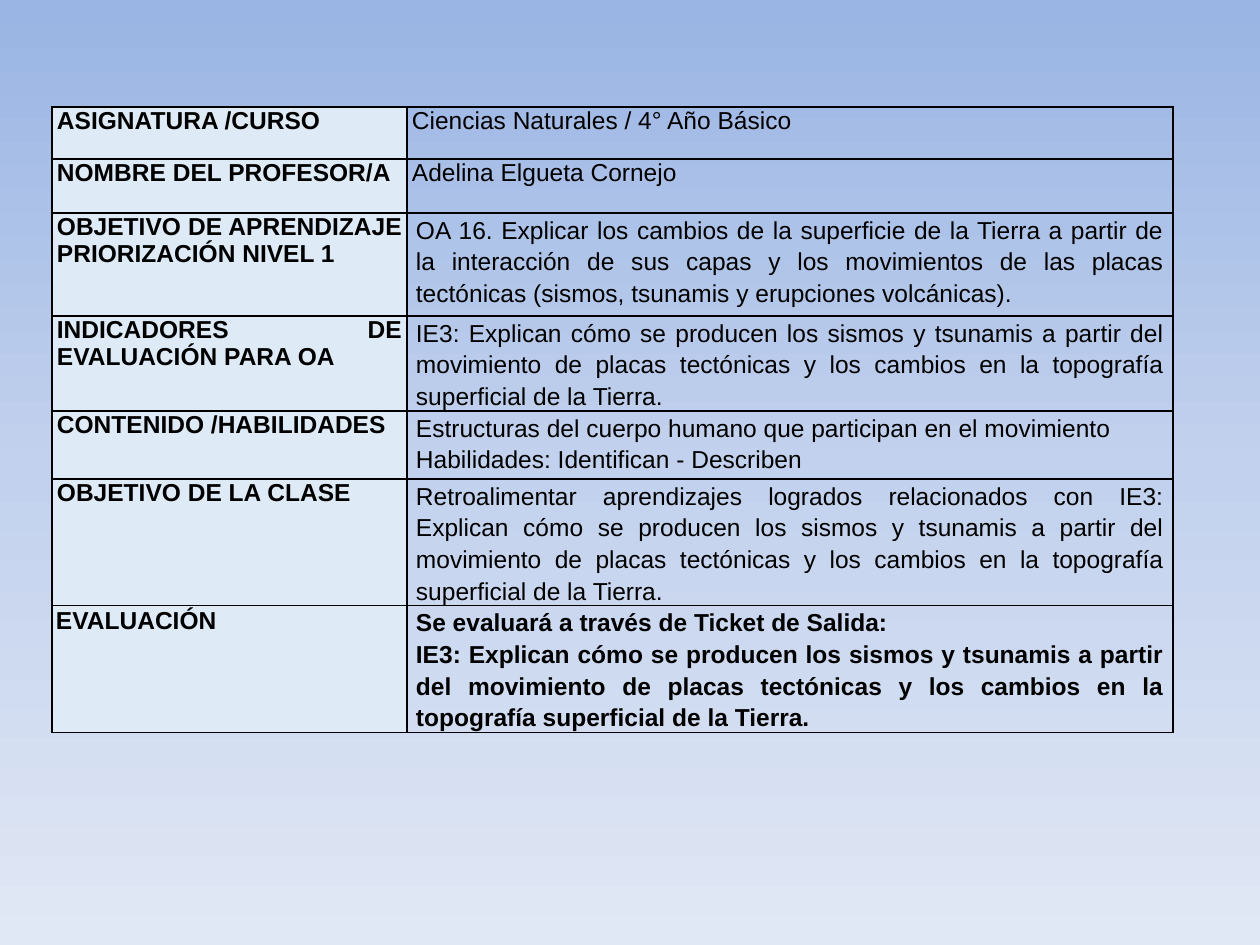
import copy
from dataclasses import dataclass

import lxml.etree
import pptx
import pptx.dml.color
import pptx.enum.text
import pptx.oxml.ns
import pptx.util

EMU_PER_PX = 914400 / 126


@dataclass(frozen=True)
class Theme:
    font: str = "Arial"
    size: int = 14
    text: str = "000000"
    border: str = "000000"
    border_width: int = 1
    label_fill: str = "DEEAF6"
    background: tuple = ((0, "9AB5E4"), (0.5, "C2D1ED"), (1, "E1E8F5"))


THEME = Theme()
TABLE_BOX = (52, 107, 1121, 625)
COLUMN_WIDTHS = (355, 766)
# Cell margins: left and right, top and bottom
TIGHT, WIDE, FRAMED = (5, 0), (9, 0), (4, 2)

# Height, label, paragraphs, label margins, content margins, spacing, bold
ROWS = [
    (52, "ASIGNATURA /CURSO", ["Ciencias Naturales / 4° Año Básico"],
     TIGHT, TIGHT, 1, False),
    (54, "NOMBRE DEL PROFESOR/A", ["Adelina Elgueta Cornejo"],
     TIGHT, TIGHT, 1, False),
    (103, "OBJETIVO DE APRENDIZAJE PRIORIZACIÓN NIVEL 1",
     ["OA 16. Explicar los cambios de la superficie de la Tierra a partir de "
      "la interacción de sus capas y los movimientos de las placas tectónicas "
      "(sismos, tsunamis y erupciones volcánicas)."],
     TIGHT, WIDE, 1.15, False),
    (95, "INDICADORES DE EVALUACIÓN PARA OA",
     ["IE3: Explican cómo se producen los sismos y tsunamis a partir del "
      "movimiento de placas tectónicas y los cambios en la topografía "
      "superficial de la Tierra."],
     TIGHT, WIDE, 1.15, False),
    (68, "CONTENIDO /HABILIDADES",
     ["Estructuras del cuerpo humano que participan en el movimiento",
      "Habilidades: Identifican - Describen"],
     TIGHT, WIDE, 1.15, False),
    (126, "OBJETIVO DE LA CLASE",
     ["Retroalimentar aprendizajes logrados relacionados con IE3: Explican "
      "cómo se producen los sismos y tsunamis a partir del movimiento de "
      "placas tectónicas y los cambios en la topografía superficial de la "
      "Tierra."],
     TIGHT, WIDE, 1.15, False),
    (127, "EVALUACIÓN",
     ["Se evaluará a través de Ticket de Salida:",
      "IE3: Explican cómo se producen los sismos y tsunamis a partir del "
      "movimiento de placas tectónicas y los cambios en la topografía "
      "superficial de la Tierra."],
     FRAMED, WIDE, 1.15, True),
]


def px(length):
    return pptx.util.Emu(round(length * EMU_PER_PX))


def rgb(value):
    return pptx.dml.color.RGBColor.from_string(value)


def paint_background(page):
    fill = page.background.fill
    fill.gradient()
    fill.gradient_angle = 270
    stop_list = page.element.find(".//" + pptx.oxml.ns.qn("a:gsLst"))
    stop_list.append(copy.deepcopy(stop_list[0]))
    for stop, (position, color) in zip(fill.gradient_stops, THEME.background):
        stop.position = position
        stop.color.rgb = rgb(color)


def add_borders(cell):
    qn = pptx.oxml.ns.qn
    properties = cell._tc.get_or_add_tcPr()
    for index, side in enumerate(("lnL", "lnR", "lnT", "lnB")):
        line = lxml.etree.Element(
            qn("a:" + side), w=str(pptx.util.Pt(THEME.border_width)))
        fill = lxml.etree.SubElement(line, qn("a:solidFill"))
        lxml.etree.SubElement(fill, qn("a:srgbClr"), val=THEME.border)
        properties.insert(index, line)


def write_cell(cell, paragraphs, margins, spacing, bold):
    cell.margin_left = cell.margin_right = px(margins[0])
    cell.margin_top = cell.margin_bottom = px(margins[1])
    cell.text_frame.text = "\n".join(paragraphs)
    for para in cell.text_frame.paragraphs:
        para.alignment = pptx.enum.text.PP_ALIGN.JUSTIFY
        para.line_spacing = spacing
        for span in para.runs:
            span.font.name = THEME.font
            span.font.size = pptx.util.Pt(THEME.size)
            span.font.bold = bold
            span.font.color.rgb = rgb(THEME.text)


def add_lesson_table(page, box):
    frame = page.shapes.add_table(
        len(ROWS), len(COLUMN_WIDTHS), *map(px, box))
    table = frame.table
    table.first_row = table.horz_banding = False
    for column, width in zip(table.columns, COLUMN_WIDTHS):
        column.width = px(width)
    for row, record in zip(table.rows, ROWS):
        height, label, content, label_margins, margins, spacing, bold = record
        row.height = px(height)
        label_cell, content_cell = row.cells
        write_cell(label_cell, [label], label_margins, 1, True)
        write_cell(content_cell, content, margins, spacing, bold)
        label_cell.fill.solid()
        label_cell.fill.fore_color.rgb = rgb(THEME.label_fill)
        content_cell.fill.background()
        add_borders(label_cell)
        add_borders(content_cell)


def main():
    deck = pptx.Presentation()
    deck.slide_width, deck.slide_height = px(1260), px(945)
    page = deck.slides.add_slide(deck.slide_layouts.get_by_name("Blank"))
    paint_background(page)
    add_lesson_table(page, TABLE_BOX)
    deck.save("out.pptx")


if __name__ == "__main__":
    main()
